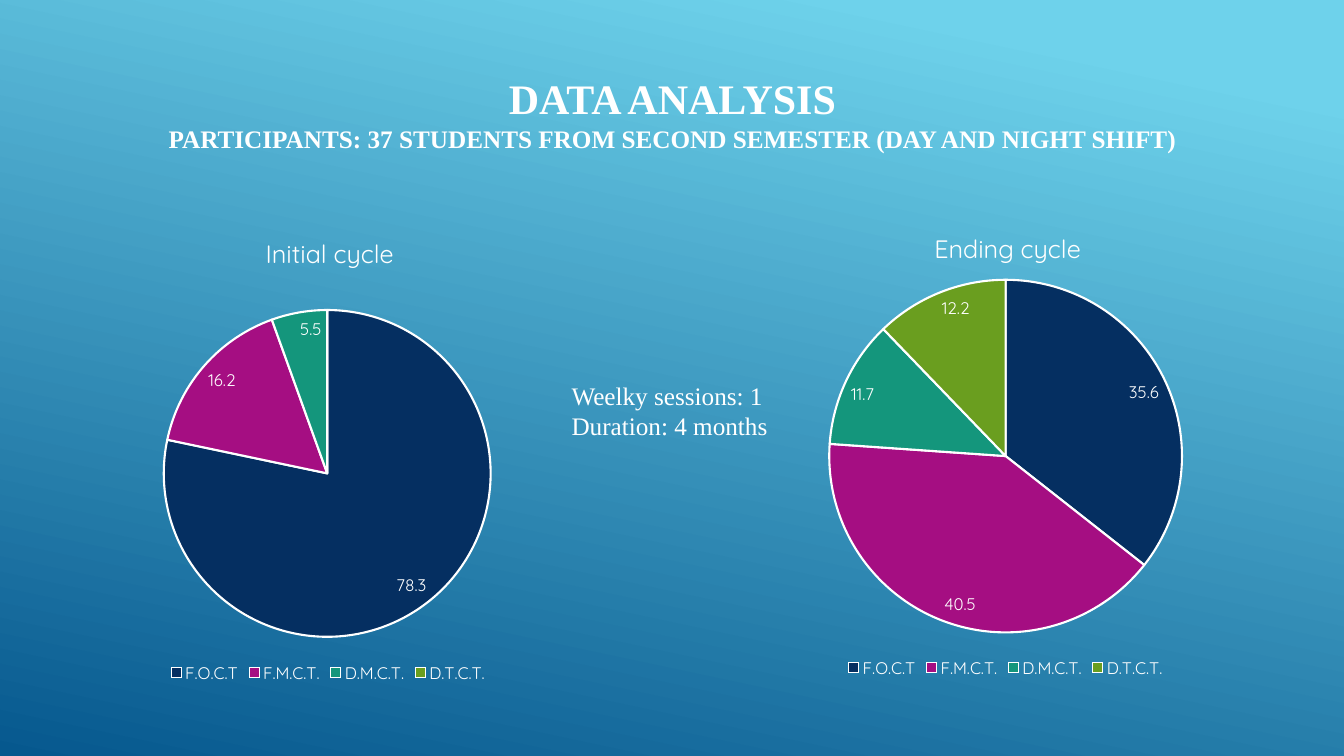
from dataclasses import dataclass

from lxml.etree import SubElement
from pptx import Presentation
from pptx.chart.data import CategoryChartData
from pptx.dml.color import RGBColor
from pptx.enum.chart import XL_CHART_TYPE, XL_LABEL_POSITION, XL_LEGEND_POSITION
from pptx.enum.text import MSO_ANCHOR, PP_ALIGN
from pptx.oxml.ns import qn
from pptx.util import Inches, Pt


@dataclass(frozen=True)
class Theme:
    white: str = "FFFFFF"
    sky: str = "6ED2EB"
    deep: str = "06588E"
    slices: tuple = ("052F61", "A50E82", "14967C", "6A9E1F")
    serif: str = "Times New Roman"
    sans: str = "Quicksand"
    heading: int = 30
    body: int = 18
    small: int = 12
    outline: float = 1.5


THEME = Theme()
WIDTH, HEIGHT = Inches(13.33), Inches(7.5)
COLUMNS = ROWS = 100
CATEGORIES = ("F.O.C.T", "F.M.C.T.", "D.M.C.T.", "D.T.C.T.")


def place(column, row, columns, rows):
    return (
        int(WIDTH * column / COLUMNS),
        int(HEIGHT * row / ROWS),
        int(WIDTH * columns / COLUMNS),
        int(HEIGHT * rows / ROWS),
    )


def style_font(font, size, name, bold=False):
    font.size = Pt(size)
    font.name = name
    font.bold = bold
    font.color.rgb = RGBColor.from_string(THEME.white)


def write(paragraph, text, *, size=THEME.body, name=THEME.serif, bold=False, align=None):
    paragraph.alignment = align
    run = paragraph.add_run()
    run.text = text
    style_font(run.font, size, name, bold)


def add_text(slide, area, lines, *, wrap=True, anchor=MSO_ANCHOR.TOP, **text_format):
    frame = slide.shapes.add_textbox(*place(*area)).text_frame
    frame.word_wrap = wrap
    frame.vertical_anchor = anchor
    for index, (text, size) in enumerate(lines):
        paragraph = frame.add_paragraph() if index else frame.paragraphs[0]
        write(paragraph, text, size=size, **text_format)


def set_layout(parent, **shares):
    layout = parent.find(qn("c:layout"))
    if layout is None:
        layout = SubElement(parent, qn("c:layout"))
        parent.insert(0, layout)
    manual = SubElement(layout, qn("c:manualLayout"))
    if "w" in shares:
        SubElement(manual, qn("c:layoutTarget")).set("val", "inner")
    for mode in ("xMode", "yMode"):
        SubElement(manual, qn(f"c:{mode}")).set("val", "edge")
    for name, share in shares.items():
        SubElement(manual, qn(f"c:{name}")).set("val", str(share / 100))


def add_pie(slide, area, title, values, title_layout, pie_layout):
    data = CategoryChartData(number_format="0.0")
    data.categories = CATEGORIES
    data.add_series("Series 1", values)
    chart = slide.shapes.add_chart(XL_CHART_TYPE.PIE, *place(*area), data).chart
    style_font(chart.font, THEME.small, THEME.sans)

    chart.has_title = True
    set_layout(chart.chart_title.element, **title_layout)
    write(chart.chart_title.text_frame.paragraphs[0], title, name=THEME.sans)
    set_layout(chart.element.find(".//" + qn("c:plotArea")), **pie_layout)

    chart.has_legend = True
    chart.legend.position = XL_LEGEND_POSITION.BOTTOM
    chart.legend.include_in_layout = False
    style_font(chart.legend.font, THEME.small, THEME.sans)

    plot = chart.plots[0]
    plot.vary_by_categories = True
    plot.has_data_labels = True
    labels = plot.data_labels
    labels.show_value = True
    labels.number_format = "0.0;;"
    labels.number_format_is_linked = False
    labels.position = XL_LABEL_POSITION.INSIDE_END
    style_font(labels.font, THEME.small, THEME.sans)

    for index, color in enumerate(THEME.slices):
        point_format = plot.series[0].points[index].format
        point_format.fill.solid()
        point_format.fill.fore_color.rgb = RGBColor.from_string(color)
        point_format.line.color.rgb = RGBColor.from_string(THEME.white)
        point_format.line.width = Pt(THEME.outline)


def paint_background(slide):
    fill = slide.background.fill
    fill.gradient()
    fill.gradient_angle = 258
    for stop, color, position in zip(fill.gradient_stops, (THEME.sky, THEME.deep), (0.1, 1)):
        stop.color.rgb = RGBColor.from_string(color)
        stop.position = position


def main():
    presentation = Presentation()
    presentation.slide_width, presentation.slide_height = WIDTH, HEIGHT
    slide = presentation.slides.add_slide(presentation.slide_layouts[6])
    paint_background(slide)
    add_pie(
        slide, (7.8, 27.47, 33.23, 63.47), "Initial cycle", (78.3, 16.2, 5.5, 0),
        {"x": 35, "y": 4.8}, {"x": 13.2, "y": 21.3, "w": 73.2, "h": 68.2},
    )
    add_pie(
        slide, (58.21, 26.8, 33.23, 63.47), "Ending cycle", (35.6, 40.5, 11.7, 12.2),
        {"x": 33, "y": 4.8}, {"x": 10.5, "y": 16.1, "w": 79, "h": 73.5},
    )
    add_text(
        slide, (6.9, 5.33, 86.27, 19.33),
        [
            ("DATA ANALYSIS", THEME.heading),
            ("PARTICIPANTS: 37 STUDENTS FROM SECOND SEMESTER (DAY AND NIGHT SHIFT)", THEME.body),
        ],
        anchor=MSO_ANCHOR.MIDDLE, bold=True, align=PP_ALIGN.CENTER,
    )
    add_text(
        slide, (41.79, 49.6, 16.43, 13.47),
        [("Weelky sessions: 1", THEME.body), ("Duration: 4 months", THEME.body)],
        wrap=False, align=PP_ALIGN.JUSTIFY,
    )
    presentation.save("out.pptx")


if __name__ == "__main__":
    main()
